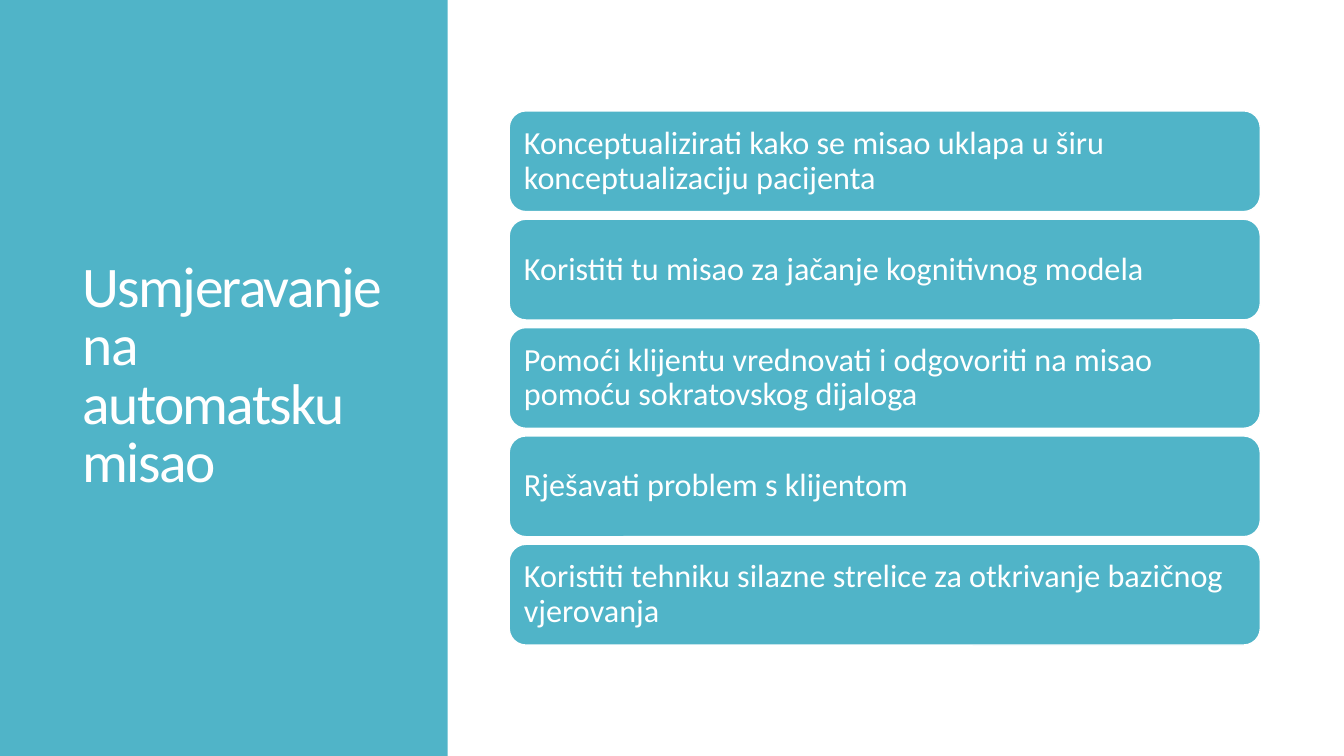
from pptx import Presentation
from pptx.dml.color import RGBColor
from pptx.enum.shapes import MSO_SHAPE
from pptx.enum.text import MSO_ANCHOR, MSO_AUTO_SIZE, PP_ALIGN
from pptx.util import Inches, Pt

RECTANGLE = MSO_SHAPE.RECTANGLE
ROUNDED = MSO_SHAPE.ROUNDED_RECTANGLE
MIDDLE = MSO_ANCHOR.MIDDLE
LEFT = PP_ALIGN.LEFT
NO_AUTOFIT = MSO_AUTO_SIZE.NONE
TITLE_ONLY = 5

STEPS = [
    "Konceptualizirati kako se misao uklapa u širu konceptualizaciju pacijenta",
    "Koristiti tu misao za jačanje kognitivnog modela",
    "Pomoći klijentu vrednovati i odgovoriti na misao pomoću sokratovskog dijaloga",
    "Rješavati problem s klijentom",
    "Koristiti tehniku silazne strelice za otkrivanje bazičnog vjerovanja",
]
STEP_TOP, STEP_PITCH = 1.1, 1.075


def color(value):
    """Turn a hex string into a colour."""
    return RGBColor.from_string(value)


class SlideBuilder:
    """Holds the style and the current slide."""

    font = "Calibri"
    accent = "50B4C8"
    light = "FFFFFF"

    def __init__(self, presentation):
        """Add a title-only slide with a plain background."""
        self.slide = presentation.slides.add_slide(presentation.slide_layouts[TITLE_ONLY])
        background = self.slide.background.fill
        background.solid()
        background.fore_color.rgb = color(self.light)

    def add_text(self, shape, text, size, line_spacing, inset_y):
        """Add one left-aligned paragraph and return its run."""
        frame = shape.text_frame
        frame.word_wrap = True
        frame.auto_size = NO_AUTOFIT
        frame.vertical_anchor = MIDDLE
        frame.margin_left = frame.margin_right = Inches(0.1)
        frame.margin_top = frame.margin_bottom = Inches(inset_y)
        paragraph = frame.paragraphs[0]
        paragraph.alignment = LEFT
        paragraph.line_spacing = line_spacing
        run = paragraph.add_run()
        run.text = text
        run.font.name = self.font
        run.font.size = Pt(size)
        run.font.color.rgb = color(self.light)
        return run

    def box(self, kind, left, top, width, height):
        """Add an accent-filled shape without an outline or shadow."""
        shape = self.slide.shapes.add_shape(
            kind, Inches(left), Inches(top), Inches(width), Inches(height))
        shape.shadow.inherit = False
        shape.fill.solid()
        shape.fill.fore_color.rgb = color(self.accent)
        shape.line.fill.background()
        return shape

    def panel(self, width, height):
        """Add the side panel behind the title."""
        shape = self.box(RECTANGLE, 0, 0, width, height)
        self.slide.shapes.title.element.addprevious(shape.element)

    def title(self, text, left, top, width, height):
        """Place and format the title placeholder."""
        title = self.slide.shapes.title
        title.left, title.top = Inches(left), Inches(top)
        title.width, title.height = Inches(width), Inches(height)
        run = self.add_text(title, text, 41, 0.85, 0.05)
        run._r.get_or_add_rPr().set("spc", "-120")

    def step(self, text, top):
        """Add one rounded step with its text."""
        shape = self.box(ROUNDED, 5.05, top, 7.45, 1)
        shape.line.color.rgb = color(self.light)
        shape.line.width = Pt(1)
        self.add_text(shape, text, 23, 0.9, 0.1)


def main():
    """Build and save the slide."""
    presentation = Presentation()
    presentation.slide_width = Inches(13.33)
    presentation.slide_height = Inches(7.5)
    builder = SlideBuilder(presentation)
    builder.panel(4.44, 7.5)
    builder.title("Usmjeravanje na automatsku misao", 0.72, 1.02, 3.27, 5.45)
    for index, text in enumerate(STEPS):
        builder.step(text, STEP_TOP + index * STEP_PITCH)
    presentation.save("out.pptx")


if __name__ == "__main__":
    main()
